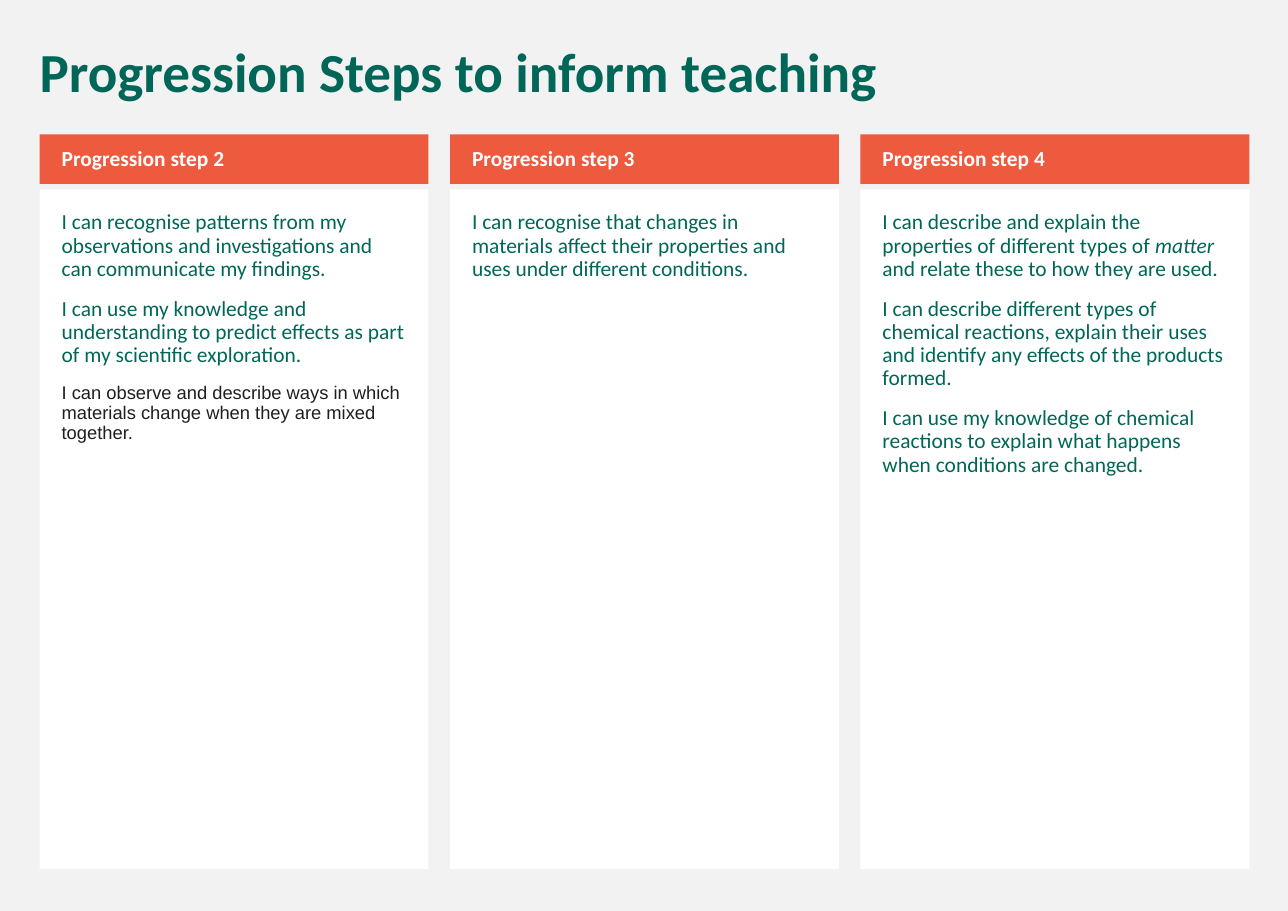
"""Build the slide of progression steps used to inform teaching."""
from dataclasses import dataclass

import pptx
import pptx.dml.color
import pptx.enum.shapes
import pptx.enum.text
import pptx.slide
import pptx.text.text
import pptx.util

Inches = pptx.util.Inches
Anchor = pptx.enum.text.MSO_ANCHOR


@dataclass(frozen=True)
class Theme:
    page: str = "F2F2F2"
    panel: str = "FFFFFF"
    band: str = "ED5A3E"
    green: str = "006758"
    dark: str = "1F1F1F"
    font: str = "Calibri"
    note_font: str = "Arial"
    title_size: int = 36
    body_size: int = 14
    note_size: int = 12


THEME = Theme()


@dataclass(frozen=True)
class Span:
    text: str
    size: int = THEME.body_size
    font: str = THEME.font
    colour: str = THEME.green
    bold: bool = False
    italic: bool = False


@dataclass(frozen=True)
class Column:
    heading: str
    paras: list[list[Span]]


@dataclass(frozen=True)
class Area:
    left: float
    top: float
    width: float
    height: float


COLUMNS = [
    Column("Progression step 2", [
        [Span("I can recognise patterns from my observations and investigations "
              "and can communicate my findings.")],
        [Span("I can use my knowledge and understanding to predict effects "
              "as part of my scientific exploration.")],
        [Span("I can observe and describe ways in which materials change when "
              "they are mixed together.",
              THEME.note_size, THEME.note_font, THEME.dark)],
    ]),
    Column("Progression step 3", [
        [Span("I can recognise that changes in materials affect their properties "
              "and uses under different conditions.")],
    ]),
    Column("Progression step 4", [
        [Span("I can describe and explain the properties of different types of "),
         Span("matter", italic=True),
         Span(" and relate these to how they are used.")],
        [Span("I can describe different types of chemical reactions, explain "
              "their uses and identify any effects of the products formed.")],
        [Span("I can use my knowledge of chemical reactions to explain what "
              "happens when conditions are changed.")],
    ]),
]

FIRST_LEFT, LAST_LEFT, COLUMN_WIDTH = 0.36, 7.81, 3.53
COLUMN_STEP = (LAST_LEFT - FIRST_LEFT) / (len(COLUMNS) - 1)
BAND_TOP, BAND_HEIGHT = 1.22, 0.45
PANEL_TOP, PANEL_HEIGHT = 1.72, 6.17
BAND_INSETS = (0.2, 0.05, 0.1, 0.05)
PANEL_INSETS = (0.2, 0.2, 0.2, 0.2)
TITLE_INSETS = (0.1, 0.05, 0.1, 0.05)


def rgb(colour: str) -> pptx.dml.color.RGBColor:
    return pptx.dml.color.RGBColor.from_string(colour)


def write_text(frame: pptx.text.text.TextFrame, paras: list[list[Span]],
               insets: tuple[float, ...], anchor: Anchor) -> None:
    frame.word_wrap = True
    frame.auto_size = pptx.enum.text.MSO_AUTO_SIZE.NONE
    frame.vertical_anchor = anchor
    (frame.margin_left, frame.margin_top,
     frame.margin_right, frame.margin_bottom) = map(Inches, insets)
    for index, spans in enumerate(paras):
        para = frame.add_paragraph() if index else frame.paragraphs[0]
        para.alignment = pptx.enum.text.PP_ALIGN.LEFT
        para.line_spacing = 0.9
        para.space_before = pptx.util.Pt(11)
        for span in spans:
            run = para.add_run()
            run.text = span.text
            run.font.name = span.font
            run.font.size = pptx.util.Pt(span.size)
            run.font.bold = span.bold
            run.font.italic = span.italic
            run.font.color.rgb = rgb(span.colour)


def add_box(page: pptx.slide.Slide, area: Area, fill: str, paras: list[list[Span]],
            insets: tuple[float, ...], anchor: Anchor) -> None:
    box = page.shapes.add_shape(
        pptx.enum.shapes.MSO_SHAPE.RECTANGLE, Inches(area.left), Inches(area.top),
        Inches(area.width), Inches(area.height))
    box.shadow.inherit = False
    box.fill.solid()
    box.fill.fore_color.rgb = rgb(fill)
    box.line.fill.background()
    write_text(box.text_frame, paras, insets, anchor)


def add_column(page: pptx.slide.Slide, column: Column, left: float) -> None:
    panel = Area(left, PANEL_TOP, COLUMN_WIDTH, PANEL_HEIGHT)
    add_box(page, panel, THEME.panel, column.paras, PANEL_INSETS, Anchor.TOP)
    heading = Span(column.heading, colour=THEME.panel, bold=True)
    band = Area(left, BAND_TOP, COLUMN_WIDTH, BAND_HEIGHT)
    add_box(page, band, THEME.band, [[heading]], BAND_INSETS, Anchor.MIDDLE)


def add_title(page: pptx.slide.Slide) -> None:
    title = page.shapes.title
    title.left, title.top = Inches(0.26), Inches(0.36)
    title.width, title.height = Inches(11.08), Inches(0.65)
    heading = Span("Progression Steps to inform teaching", THEME.title_size, bold=True)
    write_text(title.text_frame, [[heading]], TITLE_INSETS, Anchor.TOP)


def main() -> None:
    deck = pptx.Presentation()
    deck.slide_width, deck.slide_height = Inches(11.69), Inches(8.27)
    page = deck.slides.add_slide(deck.slide_layouts.get_by_name("Title Only"))
    page.background.fill.solid()
    page.background.fill.fore_color.rgb = rgb(THEME.page)
    add_title(page)
    for index, column in enumerate(COLUMNS):
        add_column(page, column, FIRST_LEFT + index * COLUMN_STEP)
    deck.save("out.pptx")


if __name__ == "__main__":
    main()
